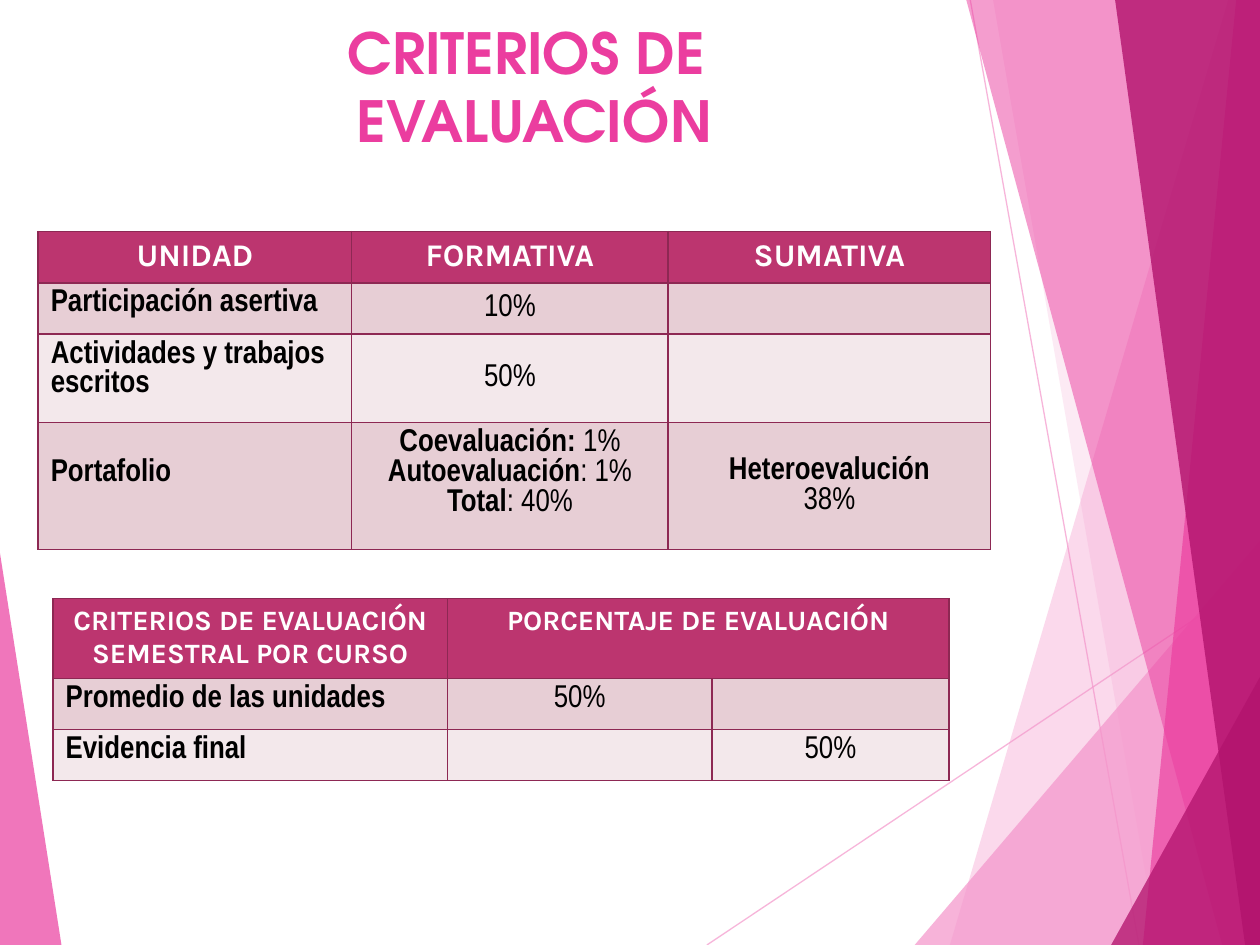
from pptx import Presentation
from pptx.dml.color import RGBColor
from pptx.enum import shapes, text
from pptx.oxml import parse_xml
from pptx.oxml.ns import nsdecls, qn
from pptx.util import Cm, Pt
from lxml import etree

THEME = {
    "pale": "F496CB", "pink": "EB3D9F", "dark": "B2136D",
    "head": "BC356F", "odd": "E7CED5", "even": "F3E8EB",
    "edge": "8D2853", "white": "FFFFFF", "black": "000000",
    "title": 32.4, "large": 18, "small": 16,
    "display": "TeX Gyre Adventor", "caps": "Karla", "body": "Arial Narrow",
}
W, H = 25.4, 19.05
MID, LEFT = text.PP_ALIGN.CENTER, text.PP_ALIGN.LEFT


def put(frame, lines, font="body", size="large", color="black", align=MID):
    """Write lines into a frame; the part before a bar is bold, the rest is not."""
    for i, line in enumerate(lines):
        para = frame.paragraphs[0] if i == 0 else frame.add_paragraph()
        para.alignment = align
        label, _, value = line.partition("|")
        for words, bold in ((label, True), (value, False)):
            if not words:
                continue
            for j, part in enumerate(words.split("\n")):
                if j:
                    para.add_line_break()
                run = para.add_run()
                run.text = part
                run.font.name = THEME[font]
                run.font.size = Pt(THEME[size])
                run.font.bold = bold
                run.font.color.rgb = RGBColor.from_string(THEME[color])


def fade(fill, alpha):
    """Set the opacity of a solid fill element, in percent."""
    tone = fill.find(qn("a:srgbClr"))
    etree.SubElement(tone, qn("a:alpha")).set("val", str(alpha * 1000))


deck = Presentation()
deck.slide_width, deck.slide_height = Cm(W), Cm(H)
slide = deck.slides.add_slide(deck.slide_layouts[6])

# Thin rays
for x1, y1, x2, y2 in ((14.25, H, W, 11.6), (19.56, 0, 22.96, H)):
    ray = slide.shapes.add_connector(
        shapes.MSO_CONNECTOR.STRAIGHT, Cm(x1), Cm(y1), Cm(x2), Cm(y2))
    ray.line.width = Pt(0.75)
    ray.line.color.rgb = RGBColor.from_string(THEME["pale"])
    props = ray._element.spPr
    fade(props.find(qn("a:ln")).find(qn("a:solidFill")), 70)
    etree.SubElement(props, qn("a:effectLst"))

# Translucent facets
right = [(W, H), (W, 0)]
facets = [
    ("pale", 36, [(24.76, 0), (19.15, H)] + right),
    ("pale", 20, [(20.02, 0), (23.34, H)] + right),
    ("pale", 72, [(18.44, H), (W, 10.9), (W, H)]),
    ("pink", 50, [(19.48, 0), (24.64, H)] + right),
    ("pink", 66, [(24.92, 0), (23.04, H)] + right),
    ("dark", 80, [(22.48, 0), (25.1, H)] + right),
    ("dark", 76, [(22.4, H), (W, 13.65), (W, H)]),
    ("pink", 70, [(0, 11.15), (1.24, H), (0, H)]),
]
for color, alpha, points in facets:
    first, *rest = [(Cm(x), Cm(y)) for x, y in points]
    pen = slide.shapes.build_freeform(*first)
    pen.add_line_segments(rest, close=True)
    facet = pen.convert_to_shape()
    facet.shadow.inherit = False
    facet.fill.solid()
    facet.fill.fore_color.rgb = RGBColor.from_string(THEME[color])
    facet.line.fill.background()
    fade(facet._element.spPr.find(qn("a:solidFill")), alpha)

# Title
title = slide.shapes.add_textbox(Cm(1.96), Cm(0.23), Cm(17.63), Cm(2.06))
title.text_frame.word_wrap = True
put(title.text_frame, ["CRITERIOS DE \nEVALUACIÓN"],
    font="display", size="title", color="pink")

# Tables
units = [
    [["UNIDAD"], ["FORMATIVA"], ["SUMATIVA"]],
    [["Participación asertiva"], ["|10%"], []],
    [["Actividades y trabajos escritos"], ["|50%"], []],
    [["Portafolio"],
     ["Coevaluación: |1%", "Autoevaluación|: 1%", "Total|: 40%"],
     ["Heteroevalución", "|38%"]],
]
course = [
    [["CRITERIOS DE EVALUACIÓN SEMESTRAL POR CURSO"],
     ["PORCENTAJE DE EVALUACIÓN"], []],
    [["Promedio de las unidades"], ["|50%"], []],
    [["Evidencia final"], [], ["|50%"]],
]
specs = [
    (0.77, 4.67, [6.32, 6.38, 6.5], [1.03, 1.03, 1.79, 2.56], "large", units),
    (1.07, 12.07, [7.95, 5.33, 4.78], [1.57, 1.03, 1.03], "small", course),
]
grids = []
for x, y, cols, rows, size, data in specs:
    grid = slide.shapes.add_table(
        len(rows), len(cols), Cm(x), Cm(y), Cm(sum(cols)), Cm(sum(rows))).table
    grids.append(grid)
    for col, wide in zip(grid.columns, cols):
        col.width = Cm(wide)
    for row, high in zip(grid.rows, rows):
        row.height = Cm(high)
    for r, line in enumerate(data):
        for c, words in enumerate(line):
            cell = grid.cell(r, c)
            if r == 0:
                put(cell.text_frame, words, font="caps", size=size, color="white")
            else:
                put(cell.text_frame, words, align=MID if c else LEFT)
            props = cell._tc.get_or_add_tcPr()
            for side in ("lnL", "lnR", "lnT", "lnB"):
                props.append(parse_xml(
                    f'<a:{side} {nsdecls("a")} w="{Pt(1)}"><a:solidFill>'
                    f'<a:srgbClr val="{THEME["edge"]}"/></a:solidFill></a:{side}>'))
            cell.fill.solid()
            tone = "head" if r == 0 else "odd" if r % 2 else "even"
            cell.fill.fore_color.rgb = RGBColor.from_string(THEME[tone])

first, second = grids
for r, c in ((1, 1), (2, 1), (3, 2)):
    first.cell(r, c).vertical_anchor = text.MSO_ANCHOR.MIDDLE
first.cell(3, 0).margin_top = Cm(0.73)
second.cell(0, 1).merge(second.cell(0, 2))

deck.save("out.pptx")
